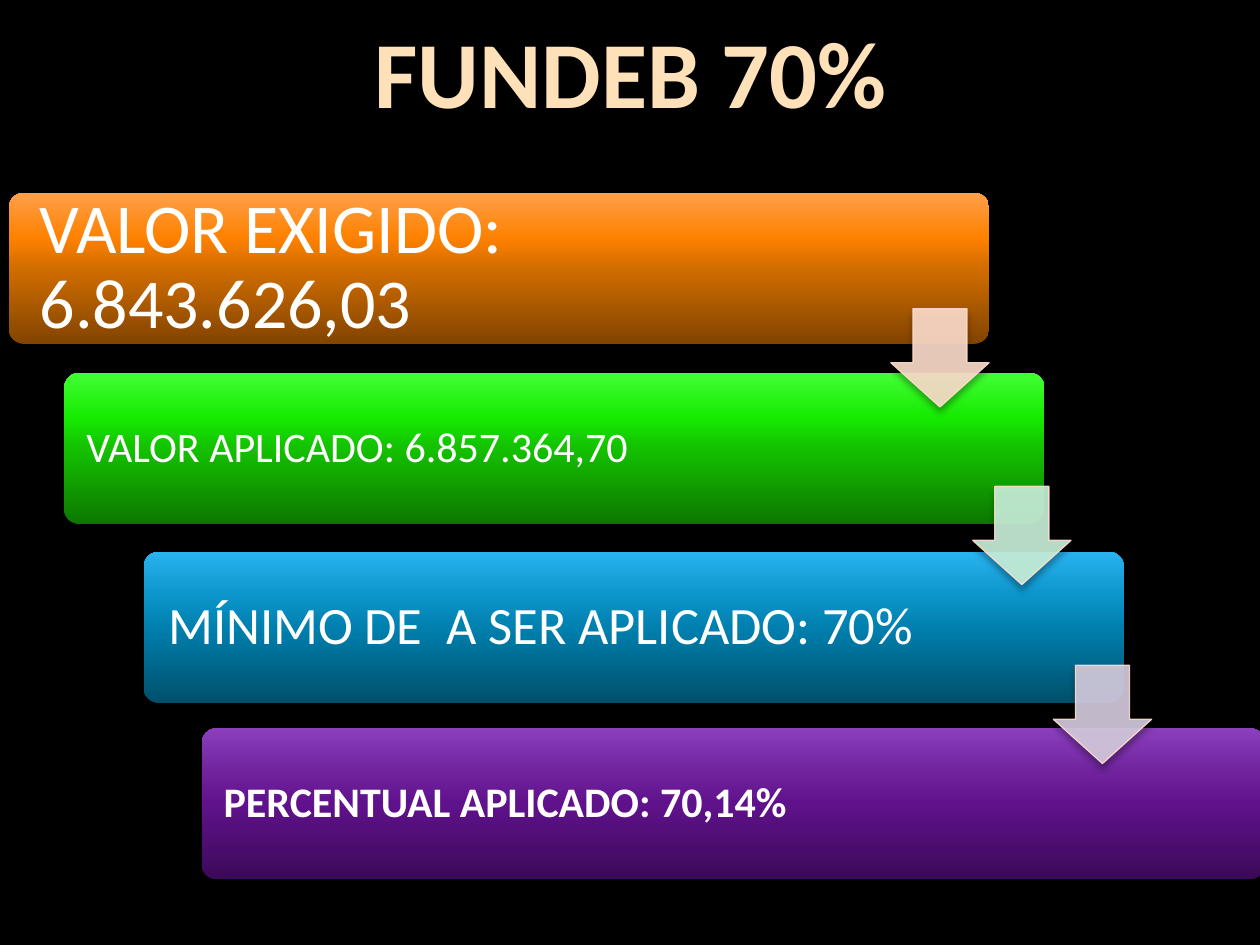
from copy import deepcopy

from lxml.etree import SubElement
from pptx import Presentation
from pptx.dml.color import RGBColor
from pptx.enum.shapes import MSO_SHAPE
from pptx.enum.text import MSO_ANCHOR, PP_ALIGN
from pptx.oxml.ns import qn
from pptx.util import Inches, Pt

BLACK = RGBColor(0x00, 0x00, 0x00)
WHITE = RGBColor(0xFF, 0xFF, 0xFF)
CREAM = RGBColor(0xFF, 0xE1, 0xB9)
PEACH = RGBColor(0xFF, 0xDE, 0xCD)
MINT = RGBColor(0xCB, 0xF2, 0xDC)
LILAC = RGBColor(0xD7, 0xCE, 0xE0)
ORANGES = [RGBColor(0x82, 0x44, 0x00), RGBColor(0xD1, 0x6D, 0x00),
           RGBColor(0xFE, 0x81, 0x00), RGBColor(0xFF, 0xA0, 0x4B)]
GREENS = [RGBColor(0x0C, 0x77, 0x00), RGBColor(0x14, 0xC0, 0x00),
          RGBColor(0x15, 0xEA, 0x00), RGBColor(0x42, 0xFF, 0x35)]
BLUES = [RGBColor(0x00, 0x4F, 0x6C), RGBColor(0x00, 0x80, 0xAE),
         RGBColor(0x0B, 0x94, 0xC9), RGBColor(0x29, 0xB3, 0xEF)]
PURPLES = [RGBColor(0x3C, 0x09, 0x58), RGBColor(0x5F, 0x12, 0x8B),
           RGBColor(0x6F, 0x22, 0x9C), RGBColor(0x8B, 0x3F, 0xBD)]
STOPS = [0, 0.5, 0.7, 1]


def set_text(tf, text, size, color, bold=False, align=PP_ALIGN.LEFT, spacing=None):
    """Write one formatted paragraph into a text frame."""
    tf.vertical_anchor = MSO_ANCHOR.MIDDLE
    p = tf.paragraphs[0]
    p.alignment = align
    p.line_spacing = spacing
    r = p.add_run()
    r.text = text
    r.font.name = "Calibri"
    r.font.size = Pt(size)
    r.font.bold = bold
    r.font.color.rgb = color


def add_shadow(sp):
    """Give a shape a soft black shadow below it."""
    sp.shadow.inherit = False
    effects = sp._element.spPr.find(qn("a:effectLst"))
    shadow = SubElement(effects, qn("a:outerShdw"), blurRad=str(Pt(4)),
                        dist=str(Pt(3)), dir="5400000", rotWithShape="0")
    color = SubElement(shadow, qn("a:srgbClr"), val=str(BLACK))
    SubElement(color, qn("a:alpha"), val="35000")


def set_gradient(sp, colors):
    """Fill a shape with a gradient that runs from bottom to top."""
    sp.fill.gradient()
    sp.fill.gradient_angle = 90
    stops = sp._element.spPr.find(qn("a:gradFill")).find(qn("a:gsLst"))
    while len(stops) < len(colors):
        stops.append(deepcopy(stops[0]))
    for stop, color, position in zip(sp.fill.gradient_stops, colors, STOPS):
        stop.color.rgb = color
        stop.position = position


def set_alpha(fill_element, percent):
    """Make a solid fill partly transparent."""
    SubElement(fill_element[0], qn("a:alpha"), val=str(percent * 1000))


def add_title(s, text):
    """Place the slide title at the top centre."""
    sp = s.shapes.title
    sp.left, sp.top, sp.width, sp.height = map(Inches, (2.85, 0.06, 4.31, 1.01))
    sp.text_frame.word_wrap = False
    set_text(sp.text_frame, text, 54, CREAM, bold=True, align=PP_ALIGN.CENTER)


def add_bar(s, left, top, width, text, size, inset, colors, bold=False):
    """Add a rounded gradient bar with its label."""
    sp = s.shapes.add_shape(MSO_SHAPE.ROUNDED_RECTANGLE, Inches(left), Inches(top),
                            Inches(width), Inches(1.2))
    sp.adjustments[0] = 0.1
    set_gradient(sp, colors)
    sp.line.fill.background()
    add_shadow(sp)
    tf = sp.text_frame
    tf.word_wrap = True
    tf.margin_left = Inches(inset)
    tf.margin_right = Inches(1.5)
    tf.margin_top = tf.margin_bottom = Inches(0.1)
    set_text(tf, text, size, WHITE, bold=bold, spacing=0.9)


def add_arrow(s, left, top, color):
    """Add a translucent arrow leading to the next bar."""
    sp = s.shapes.add_shape(MSO_SHAPE.DOWN_ARROW, Inches(left), Inches(top),
                            Inches(0.78), Inches(0.78))
    sp.adjustments[0] = 0.55
    sp.adjustments[1] = 0.45
    sp.fill.solid()
    sp.fill.fore_color.rgb = color
    sp.line.color.rgb = PEACH
    sp.line.width = Pt(0.75)
    spPr = sp._element.spPr
    for parent in (spPr, spPr.find(qn("a:ln"))):
        set_alpha(parent.find(qn("a:solidFill")), 90)
    add_shadow(sp)


def main():
    """Build the slide and save it."""
    prs = Presentation()
    prs.slide_width, prs.slide_height = Inches(10), Inches(7.5)
    s = prs.slides.add_slide(prs.slide_layouts[5])
    s.background.fill.solid()
    s.background.fill.fore_color.rgb = BLACK
    add_title(s, "FUNDEB 70%")
    add_bar(s, 0.07, 1.53, 7.78, "VALOR EXIGIDO: 6.843.626,03", 40, 0.21, ORANGES)
    add_bar(s, 0.51, 2.96, 7.78, "VALOR APLICADO: 6.857.364,70", 24, 0.14, GREENS)
    add_bar(s, 1.14, 4.38, 7.78, "MÍNIMO DE  A SER APLICADO: 70%", 30, 0.16, BLUES)
    add_bar(s, 1.6, 5.78, 8.44, "PERCENTUAL APLICADO: 70,14%", 24, 0.14, PURPLES, bold=True)
    for left, top, color in [(7.07, 2.45, PEACH), (7.72, 3.86, MINT), (8.36, 5.28, LILAC)]:
        add_arrow(s, left, top, color)
    prs.save("out.pptx")


if __name__ == "__main__":
    main()
